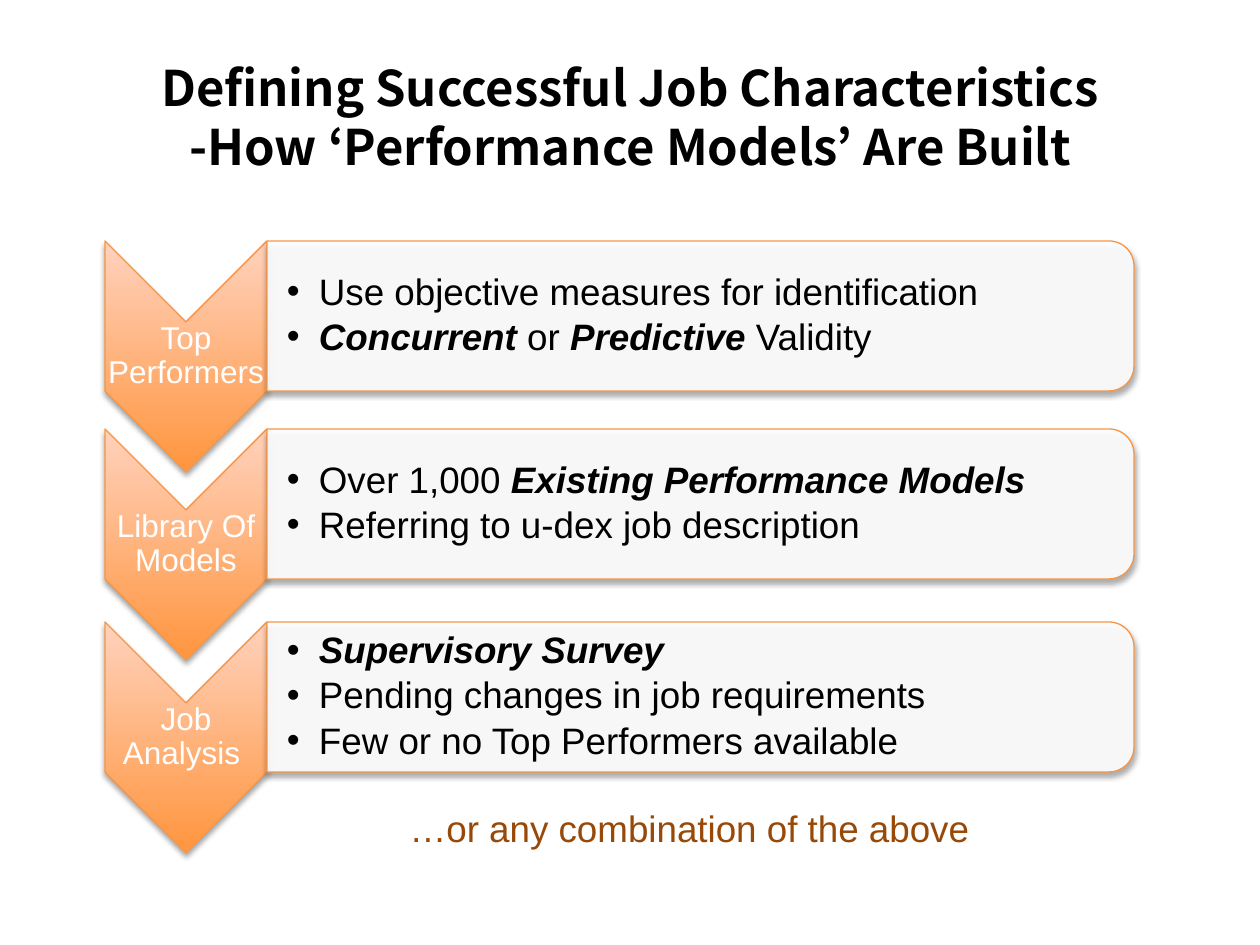
from pptx import Presentation
from pptx.dml.color import RGBColor
from pptx.enum.shapes import MSO_SHAPE
from pptx.enum.text import MSO_ANCHOR, PP_ALIGN
from pptx.oxml import parse_xml
from pptx.oxml.ns import nsdecls
from pptx.util import Pt


def px(length):
    return round(length * 914400 / 126)


def add_text(area, paragraphs, size, color, font="Arial", insets=(1, 1), spacing=None, after=None):
    """Add a text box; each paragraph is a list of (text, emphasised) spans."""
    box = slide.shapes.add_textbox(*[px(length) for length in area])
    frame = box.text_frame
    frame.word_wrap = True
    frame.vertical_anchor = MSO_ANCHOR.MIDDLE
    frame.margin_left, frame.margin_right = px(insets[0]), px(insets[1])
    frame.margin_top = frame.margin_bottom = px(insets[1])
    for index, spans in enumerate(paragraphs):
        para = frame.paragraphs[0] if index == 0 else frame.add_paragraph()
        para.alignment = PP_ALIGN.CENTER
        para.line_spacing = spacing
        if after:
            para._p.get_or_add_pPr().append(parse_xml(
                f'<a:spcAft {nsdecls("a")}><a:spcPct val="{after * 1000}"/></a:spcAft>'))
        for text, emphasised in spans:
            span = para.add_run()
            span.text = text
            span.font.name = font
            span.font.size = Pt(size)
            span.font.bold = span.font.italic = emphasised
            span.font.color.rgb = RGBColor.from_string(color)
    return box


deck = Presentation()
deck.slide_width, deck.slide_height = px(1260), px(945)
slide = deck.slides.add_slide(deck.slide_layouts[6])

# Steps: top edge, chevron label, bullets
steps = [
    (241, "Top Performers", [
        [("Use objective measures for identification", False)],
        [("Concurrent ", True), ("or ", False), ("Predictive", True), (" Validity", False)],
    ]),
    (429, "Library Of Models", [
        [("Over 1,000 ", False), ("Existing Performance Models", True)],
        [("Referring to u-dex job description", False)],
    ]),
    (622, "Job Analysis ", [
        [("Supervisory Survey", True)],
        [("Pending changes in job requirements", False)],
        [("Few or no Top Performers available", False)],
    ]),
]
chevron_left, chevron_width, chevron_height = 105, 162, 231
panel_left, panel_width, panel_height = 267, 867, 150

for top, label, bullets in steps:
    # Chevron and panel, both turned a quarter clockwise about their centres
    outlines = [
        (MSO_SHAPE.CHEVRON, chevron_left, chevron_width, chevron_height),
        (MSO_SHAPE.ROUND_2_SAME_RECTANGLE, panel_left, panel_width, panel_height),
    ]
    for kind, left, width, height in outlines:
        shift = (width - height) / 2
        shape = slide.shapes.add_shape(
            kind, px(left + shift), px(top - shift), px(height), px(width))
        shape.rotation = 90
        shape.line.color.rgb = RGBColor.from_string("F79646")
        shape.line.width = Pt(0.75)
        if kind == MSO_SHAPE.CHEVRON:
            shape.fill.gradient()
            shape.fill.gradient_angle = 90
            for stop, color in zip(shape.fill.gradient_stops, ("FF953E", "FFD2BD")):
                stop.color.rgb = RGBColor.from_string(color)
            shape._element.spPr.find("{*}gradFill").set("rotWithShape", "0")
        else:
            shape.fill.solid()
            shape.fill.fore_color.rgb = RGBColor.from_string("FFFFFF")
            shape._element.spPr.find("{*}solidFill/{*}srgbClr").append(
                parse_xml(f'<a:alpha {nsdecls("a")} val="90000"/>'))
        shape.shadow.inherit = False
        shape._element.spPr.find("{*}effectLst").append(parse_xml(
            f'<a:outerShdw {nsdecls("a")} blurRad="{Pt(3.1)}" dist="{Pt(1.8)}" '
            'dir="5400000" rotWithShape="0"><a:srgbClr val="000000">'
            '<a:alpha val="35000"/></a:srgbClr></a:outerShdw>'))

    # Chevron label
    add_text((chevron_left, top + 81, chevron_width, 69), [[(label, False)]],
             18, "FFFFFF", spacing=0.9, after=35)

    # Panel bullets
    box = add_text((panel_left, top + 7, 859, 136), bullets, 21, "000000",
                   insets=(20, 1), spacing=0.9, after=15)
    for para in box.text_frame.paragraphs:
        para.alignment = PP_ALIGN.LEFT
        properties = para._p.get_or_add_pPr()
        properties.set("marL", str(px(32)))
        properties.set("indent", str(px(-32)))
        properties.append(parse_xml(f'<a:buFont {nsdecls("a")} typeface="Arial"/>'))
        properties.append(parse_xml(f'<a:buChar {nsdecls("a")} char="•"/>'))

# Closing remark
add_text((243, 799, 893, 57), [[("…or any combination of the above", False)]],
         21, "984807", insets=(13, 13))

# Title
title = add_text((63, 37, 1134, 158), [
    [("Defining Successful Job Characteristics", False)],
    [("-How ‘Performance Models’ Are Built", False)],
], 28, "000000", font="Noto Sans CJK JP", insets=(13, 13))
for para in title.text_frame.paragraphs:
    for span in para.runs:
        span.font.bold = True

deck.save("out.pptx")
